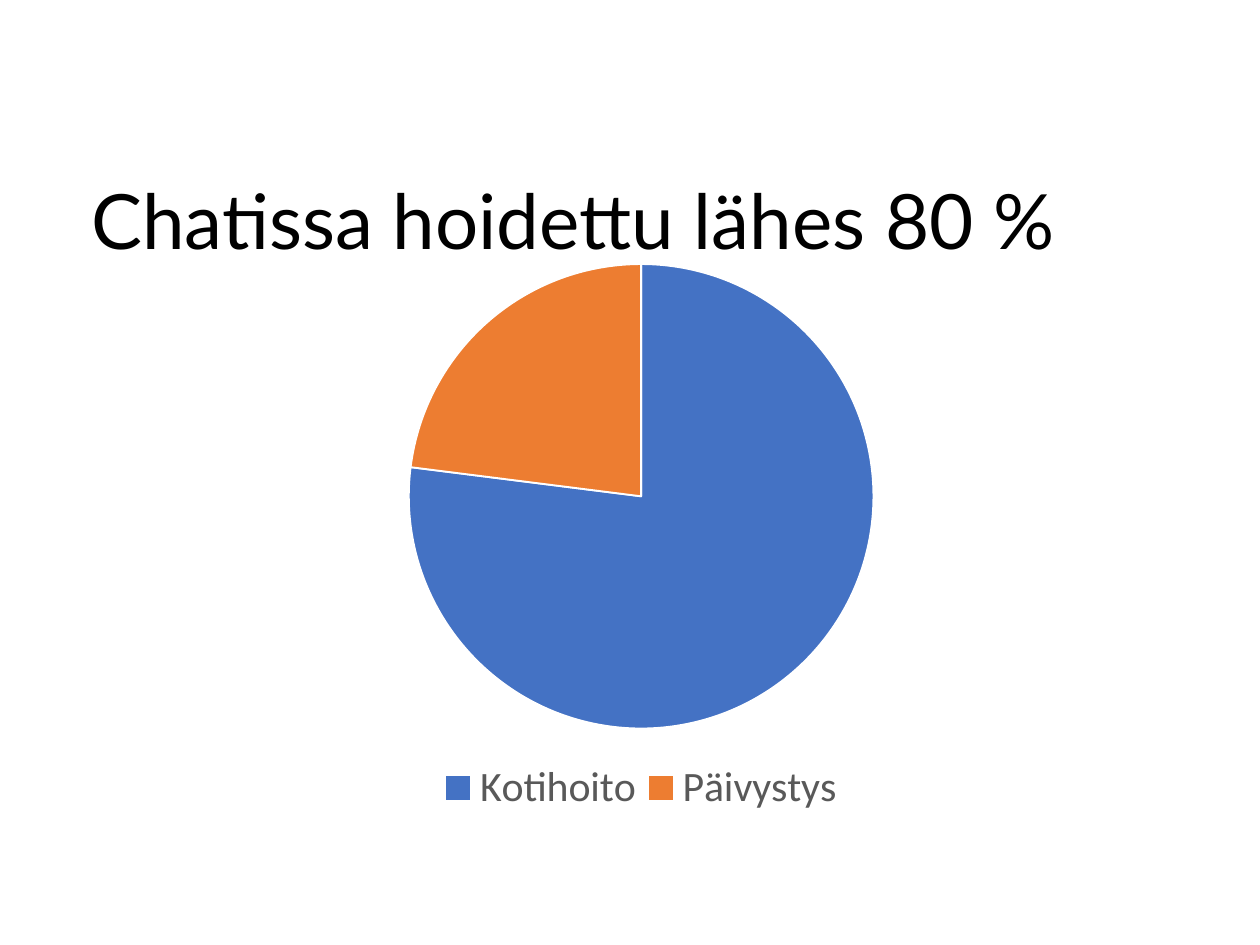
from lxml import etree
from pptx import Presentation
from pptx import util as u
from pptx.chart.data import CategoryChartData
from pptx.dml.color import RGBColor
from pptx.enum import chart as kinds, text
from pptx.oxml import ns

PARTS = [("Kotihoito", 77, "4472C4"), ("Päivystys", 23, "ED7D31")]


def style(font, name, size, color):
    font.name = name
    font.size = u.Pt(size)
    font.color.rgb = RGBColor.from_string(color)


def place(item, **spots):
    """Fix a chart part's layout as fractions of the chart."""
    for old in item.findall(ns.qn("c:layout")):
        item.remove(old)
    layout = etree.Element(ns.qn("c:layout"))
    manual = etree.SubElement(layout, ns.qn("c:manualLayout"))
    if item.tag == ns.qn("c:plotArea"):
        etree.SubElement(manual, ns.qn("c:layoutTarget")).set("val", "inner")
    for key in ("xMode", "yMode"):
        etree.SubElement(manual, ns.qn("c:" + key)).set("val", "edge")
    for key, val in spots.items():
        etree.SubElement(manual, ns.qn("c:" + key)).set("val", str(val))
    pos = item.find(ns.qn("c:legendPos"))
    if pos is None:
        item.insert(0, layout)
    else:
        pos.addnext(layout)


def add_title(slide, box):
    frame = slide.shapes.add_textbox(*box).text_frame
    frame.word_wrap = True
    frame.vertical_anchor = text.MSO_ANCHOR.MIDDLE
    frame.margin_left = frame.margin_right = u.Cm(0.13)
    frame.margin_top = frame.margin_bottom = u.Cm(0.13)
    frame.text = "Chatissa hoidettu lähes 80 %"
    line = frame.paragraphs[0]
    line.line_spacing = 0.9
    style(line.runs[0].font, "Lato", 62, "000000")


def add_pie(slide, box):
    data = CategoryChartData()
    data.categories = [name for name, _, _ in PARTS]
    data.add_series("Series 1", [share for _, share, _ in PARTS])
    chart = slide.shapes.add_chart(
        kinds.XL_CHART_TYPE.PIE, *box, data).chart
    style(chart.font, "Roboto", 10, "000000")
    chart.has_title = False
    chart.has_legend = True
    legend = chart.legend
    legend.position = kinds.XL_LEGEND_POSITION.BOTTOM
    legend.include_in_layout = True
    style(legend.font, "Calibri", 34, "595959")

    plot = chart.plots[0]
    plot.vary_by_categories = True
    for i, (_, _, color) in enumerate(PARTS):
        part = plot.series[0].points[i].format
        part.fill.solid()
        part.fill.fore_color.rgb = RGBColor.from_string(color)
        part.line.color.rgb = RGBColor.from_string("FFFFFF")
        part.line.width = u.Pt(1.5)

    area = chart.element.find(".//" + ns.qn("c:plotArea"))
    place(area, x=0.005, y=0.005, w=0.99, h=0.803)
    place(chart.element.find(".//" + ns.qn("c:legend")),
          x=0.06, y=0.86, w=0.88, h=0.1)


def main():
    deck = Presentation()
    deck.slide_width, deck.slide_height = u.Cm(36.12), u.Cm(27.1)
    slide = deck.slides.add_slide(deck.slide_layouts[6])
    add_title(slide, [u.Cm(n) for n in (2.49, 4.47, 31.17, 3.94)])
    add_pie(slide, [u.Cm(n) for n in (11.61, 7.49, 13.54, 16.59)])
    deck.save("out.pptx")


if __name__ == "__main__":
    main()
